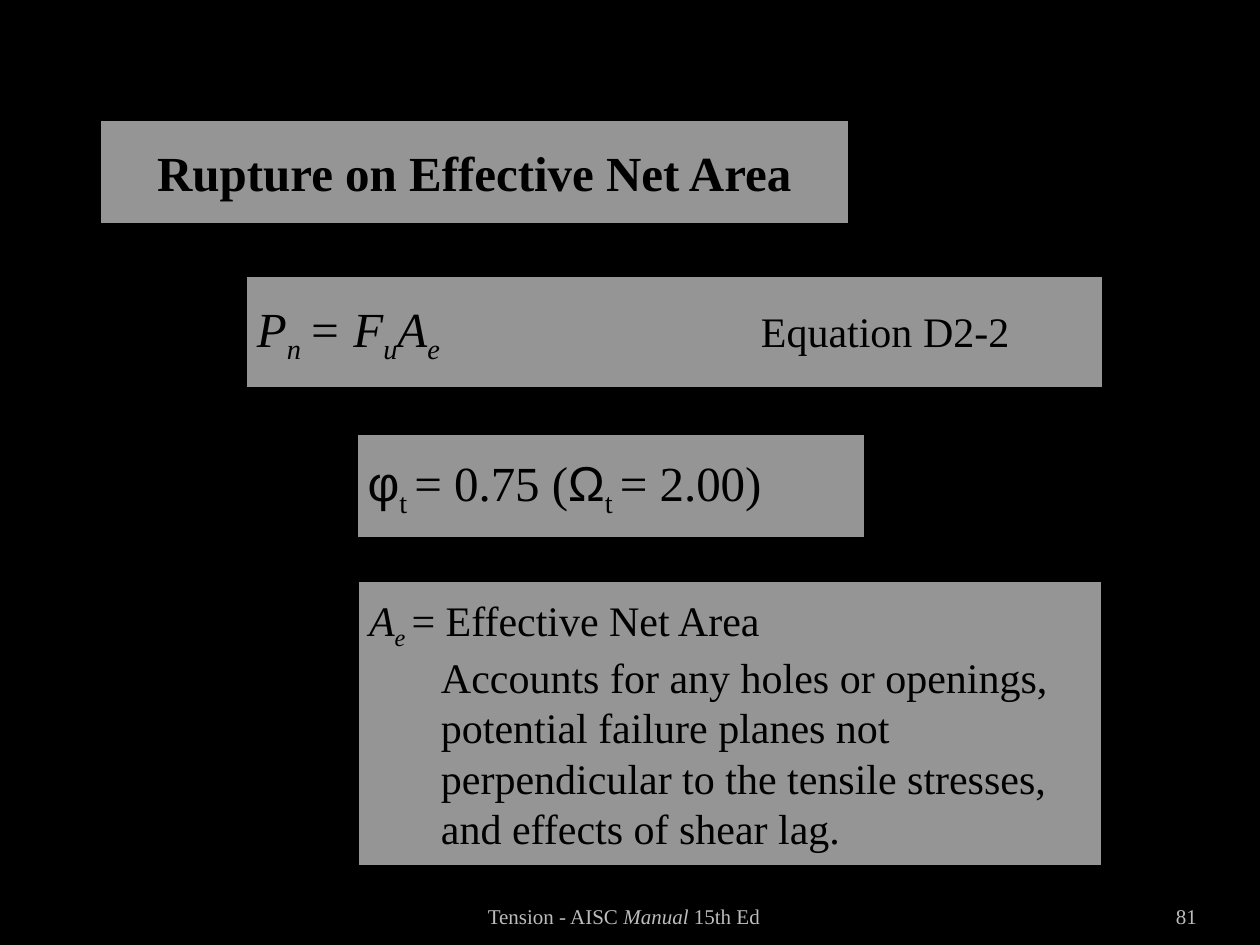
from lxml import etree
from pptx import Presentation
from pptx.dml.color import RGBColor
from pptx.enum.shapes import MSO_SHAPE
from pptx.enum.text import MSO_ANCHOR, MSO_AUTO_SIZE, PP_ALIGN
from pptx.oxml.ns import qn
from pptx.util import Cm, Pt

RECT = MSO_SHAPE.RECTANGLE
MIDDLE, BOTTOM = MSO_ANCHOR.MIDDLE, MSO_ANCHOR.BOTTOM
LEFT, CENTER, RIGHT = PP_ALIGN.LEFT, PP_ALIGN.CENTER, PP_ALIGN.RIGHT

COLORS = {"back": "000000", "panel": "F2F2F2", "text": "000000", "footer": "BCBCBC"}
SERIF, SANS = "Times New Roman", "Arial"
ITALIC = {"italic": True}
SUB = {"sub": True}
ITALIC_SUB = {**ITALIC, **SUB}
GREEK = {"name": SANS}
PANEL_OPACITY = 62


def rgb(key):
    return RGBColor.from_string(COLORS[key])


def place(sp, box):
    for name, value in zip(("left", "top", "width", "height"), box):
        setattr(sp, name, Cm(value))


def style_panel(sp):
    """Translucent grey fill with a heavy black outline."""
    sp.fill.solid()
    sp.fill.fore_color.rgb = rgb("panel")
    clr = sp.fill._xPr.find(qn("a:solidFill"))[0]
    etree.SubElement(clr, qn("a:alpha"), val=str(PANEL_OPACITY * 1000))
    sp.line.color.rgb = rgb("back")
    sp.line.width = Pt(3)


def add_runs(p, runs, size, color="text", align=LEFT):
    """Each run is (text, format values that differ from the base)."""
    p.alignment = align
    for text, changes in runs:
        r = p.add_run()
        r.text = text
        fmt = {"name": SERIF, "size": size, "bold": False, "italic": False, **changes}
        if fmt.pop("sub", False):
            r._r.get_or_add_rPr().set("baseline", "-25000")
        fmt["size"] = Pt(fmt["size"])
        for name, value in fmt.items():
            setattr(r.font, name, value)
        r.font.color.rgb = rgb(color)


def set_frame(tf, anchor):
    tf.word_wrap = True
    tf.auto_size = MSO_AUTO_SIZE.NONE
    tf.vertical_anchor = anchor


def add_panel(s, box, runs, size):
    sp = s.shapes.add_shape(RECT, *map(Cm, box))
    sp.shadow.inherit = False
    style_panel(sp)
    set_frame(sp.text_frame, MIDDLE)
    add_runs(sp.text_frame.paragraphs[0], runs, size)
    return sp.text_frame


def add_title(s, box, text):
    sp = s.shapes.title
    place(sp, box)
    style_panel(sp)
    set_frame(sp.text_frame, MIDDLE)
    add_runs(sp.text_frame.paragraphs[0], [(text, {"bold": True})], 28, align=CENTER)


def add_footer(s, box, runs):
    tf = s.shapes.add_textbox(*map(Cm, box)).text_frame
    set_frame(tf, BOTTOM)
    tf.margin_left = tf.margin_right = 0
    add_runs(tf.paragraphs[0], runs, 12, "footer", RIGHT)


def add_tab_stop(p, pos):
    tabs = etree.SubElement(p._p.get_or_add_pPr(), qn("a:tabLst"))
    etree.SubElement(tabs, qn("a:tab"), pos=str(Cm(pos)), algn="l")


def main():
    prs = Presentation()
    prs.slide_width, prs.slide_height = Cm(25.4), Cm(19.05)
    s = prs.slides.add_slide(prs.slide_layouts[5])
    s.background.fill.solid()
    s.background.fill.fore_color.rgb = rgb("back")

    add_title(s, (1.98, 2.39, 15.16, 2.16), "Rupture on Effective Net Area")

    # Effective net area and its explanation
    tf = add_panel(s, (7.19, 11.68, 15.06, 5.82), [
        ("A", ITALIC), ("e ", ITALIC_SUB), ("= Effective Net Area", {})], 24)
    p = tf.add_paragraph()
    p._p.get_or_add_pPr().set("marL", str(Cm(1.45)))
    add_runs(p, [("Accounts for any holes or openings, potential failure planes not "
                  "perpendicular to the tensile stresses, and effects of shear lag.", {})], 24)

    # Nominal strength, with the equation number at a tab stop
    tf = add_panel(s, (4.93, 5.54, 17.35, 2.31), [
        ("P", ITALIC), ("n ", ITALIC_SUB), ("= F", ITALIC), ("u", ITALIC_SUB),
        ("A", ITALIC), ("e\t", ITALIC_SUB), ("Equation D2-2", {"size": 24})], 28)
    add_tab_stop(tf.paragraphs[0], 10.16)

    # Resistance and safety factors
    add_panel(s, (7.16, 8.71, 10.31, 2.18), [
        ("φ", GREEK), ("t ", SUB), ("= 0.75 (", {}),
        ("Ω", GREEK), ("t ", SUB), ("= 2.00)", {})], 28)

    # Footer and page number
    add_footer(s, (22.02, 17.83, 2.11, 1.02), [("81", {})])
    add_footer(s, (8.41, 17.83, 6.91, 1.02), [
        ("Tension - AISC ", {}), ("Manual ", ITALIC), ("15th Ed", {})])

    prs.save("out.pptx")


if __name__ == "__main__":
    main()
